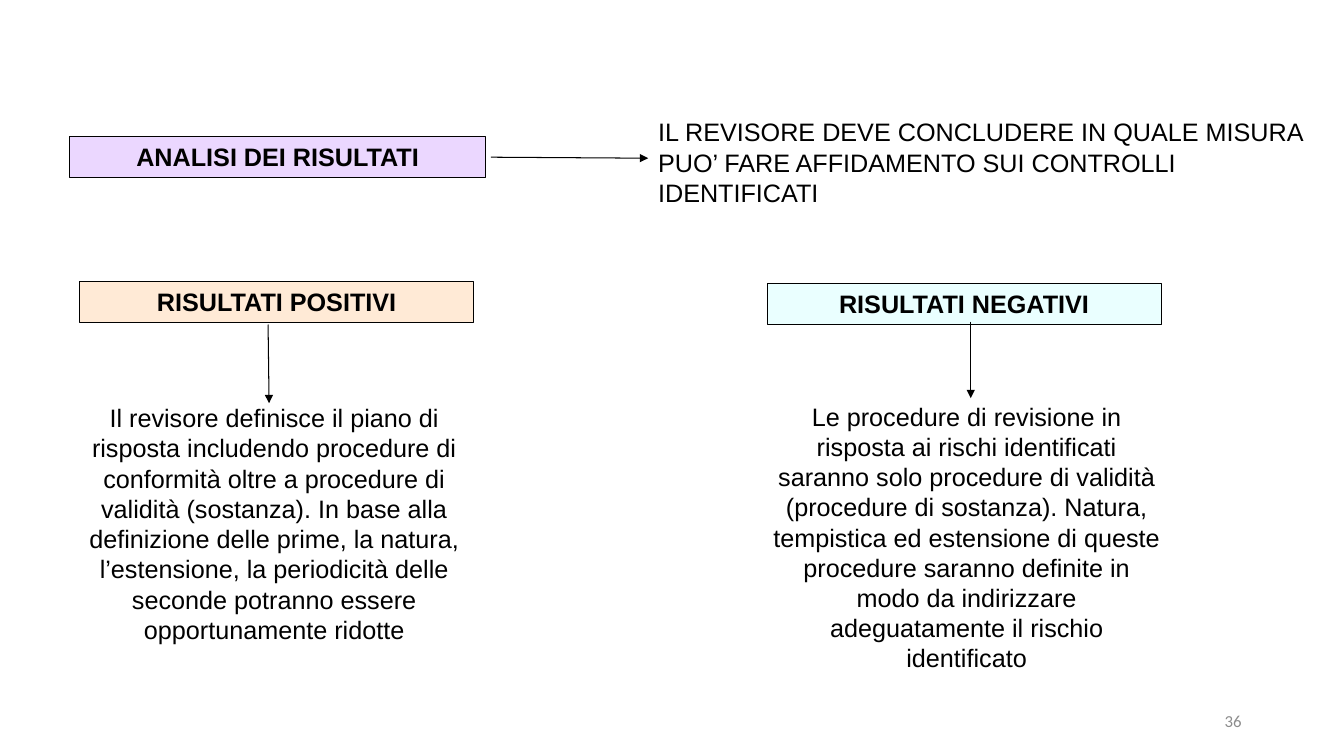
from dataclasses import dataclass

from lxml import etree
from pptx import Presentation
from pptx import util as u
from pptx.dml.color import RGBColor
from pptx.enum import shapes, text
from pptx.oxml.ns import qn


@dataclass(frozen=True)
class Theme:
    font: str = "Arial"
    number_font: str = "Calibri"
    body_size: float = 18
    number_size: float = 12
    line_width: float = 0.75
    ink: str = "000000"
    number_ink: str = "8C8C8C"
    analysis: str = "CC99FF"
    positive: str = "FFCC99"
    negative: str = "CCFFFF"


def write(shape, content, *, font, size, color, bold=False,
          align=text.PP_ALIGN.LEFT, anchor=text.MSO_ANCHOR.TOP):
    frame = shape.text_frame
    frame.word_wrap = True
    frame.vertical_anchor = anchor
    paragraph = frame.paragraphs[0]
    paragraph.alignment = align
    run = paragraph.add_run()
    run.text = content
    run.font.name = font
    run.font.size = u.Pt(size)
    run.font.bold = bold
    run.font.color.rgb = RGBColor.from_string(color)


class SlideBuilder:
    def __init__(self, slide, theme):
        self.slide = slide
        self.theme = theme

    def style_line(self, line):
        line.color.rgb = RGBColor.from_string(self.theme.ink)
        line.width = u.Pt(self.theme.line_width)

    def heading(self, content, left, top, width, fill, opacity):
        """Add a bordered box with a translucent fill; opacity is in percent."""
        shape = self.slide.shapes.add_shape(
            shapes.MSO_SHAPE.RECTANGLE, u.Pt(left), u.Pt(top), u.Pt(width), u.Pt(29.5))
        shape.shadow.inherit = False
        shape.fill.solid()
        shape.fill.fore_color.rgb = RGBColor.from_string(fill)
        color = shape._element.spPr.find(qn("a:solidFill"))[0]
        etree.SubElement(color, qn("a:alpha"), val=str(opacity * 1000))
        self.style_line(shape.line)
        write(shape, content, font=self.theme.font, size=self.theme.body_size,
              color=self.theme.ink, bold=True, align=text.PP_ALIGN.CENTER)

    def text_box(self, content, left, top, width, height, **style):
        shape = self.slide.shapes.add_textbox(
            u.Pt(left), u.Pt(top), u.Pt(width), u.Pt(height))
        defaults = dict(font=self.theme.font, size=self.theme.body_size,
                        color=self.theme.ink)
        write(shape, content, **{**defaults, **style})

    def arrow(self, *ends):
        connector = self.slide.shapes.add_connector(
            shapes.MSO_CONNECTOR.STRAIGHT, *(u.Pt(value) for value in ends))
        self.style_line(connector.line)
        properties = connector._element.spPr
        etree.SubElement(properties.find(qn("a:ln")), qn("a:tailEnd"), type="triangle")
        etree.SubElement(properties, qn("a:effectLst"))


def main():
    presentation = Presentation()
    presentation.slide_width = u.Pt(960)
    presentation.slide_height = u.Pt(540)
    theme = Theme()
    slide = presentation.slides.add_slide(presentation.slide_layouts[6])
    builder = SlideBuilder(slide, theme)

    builder.heading("ANALISI DEI RISULTATI", 49.7, 97.5, 297.4, theme.analysis, 39)
    builder.text_box(
        "IL REVISORE DEVE CONCLUDERE IN QUALE MISURA PUO’ FARE AFFIDAMENTO "
        "SUI CONTROLLI IDENTIFICATI", 463, 79.9, 477.4, 72)
    builder.arrow(350.6, 112.3, 463, 113)

    outcomes = [
        ("RISULTATI POSITIVI", theme.positive, (56.9, 200.9),
         "Il revisore definisce il piano di risposta includendo procedure di "
         "conformità oltre a procedure di validità (sostanza). In base alla "
         "definizione delle prime, la natura, l’estensione, la periodicità delle "
         "seconde potranno essere opportunamente ridotte",
         (49.7, 283.9), 180, (191.5, 231.8, 192.2, 288)),
        ("RISULTATI NEGATIVI", theme.negative, (547.9, 202.3),
         "Le procedure di revisione in risposta ai rischi identificati saranno "
         "solo procedure di validità (procedure di sostanza). Natura, tempistica "
         "ed estensione di queste procedure saranno definite in modo da "
         "indirizzare adeguatamente il rischio identificato",
         (544.3, 282.8), 201.6, (693.4, 229.7, 693.4, 284.4)),
    ]
    for title, fill, title_at, detail, detail_at, height, arrow_ends in outcomes:
        builder.heading(title, *title_at, 281.5, fill, 40)
        builder.text_box(detail, *detail_at, 292.3, height, align=text.PP_ALIGN.CENTER)
        builder.arrow(*arrow_ends)

    builder.text_box("36", 678, 500.4, 216, 28.8, font=theme.number_font,
                     size=theme.number_size, color=theme.number_ink,
                     align=text.PP_ALIGN.RIGHT, anchor=text.MSO_ANCHOR.MIDDLE)
    presentation.save("out.pptx")


if __name__ == "__main__":
    main()
